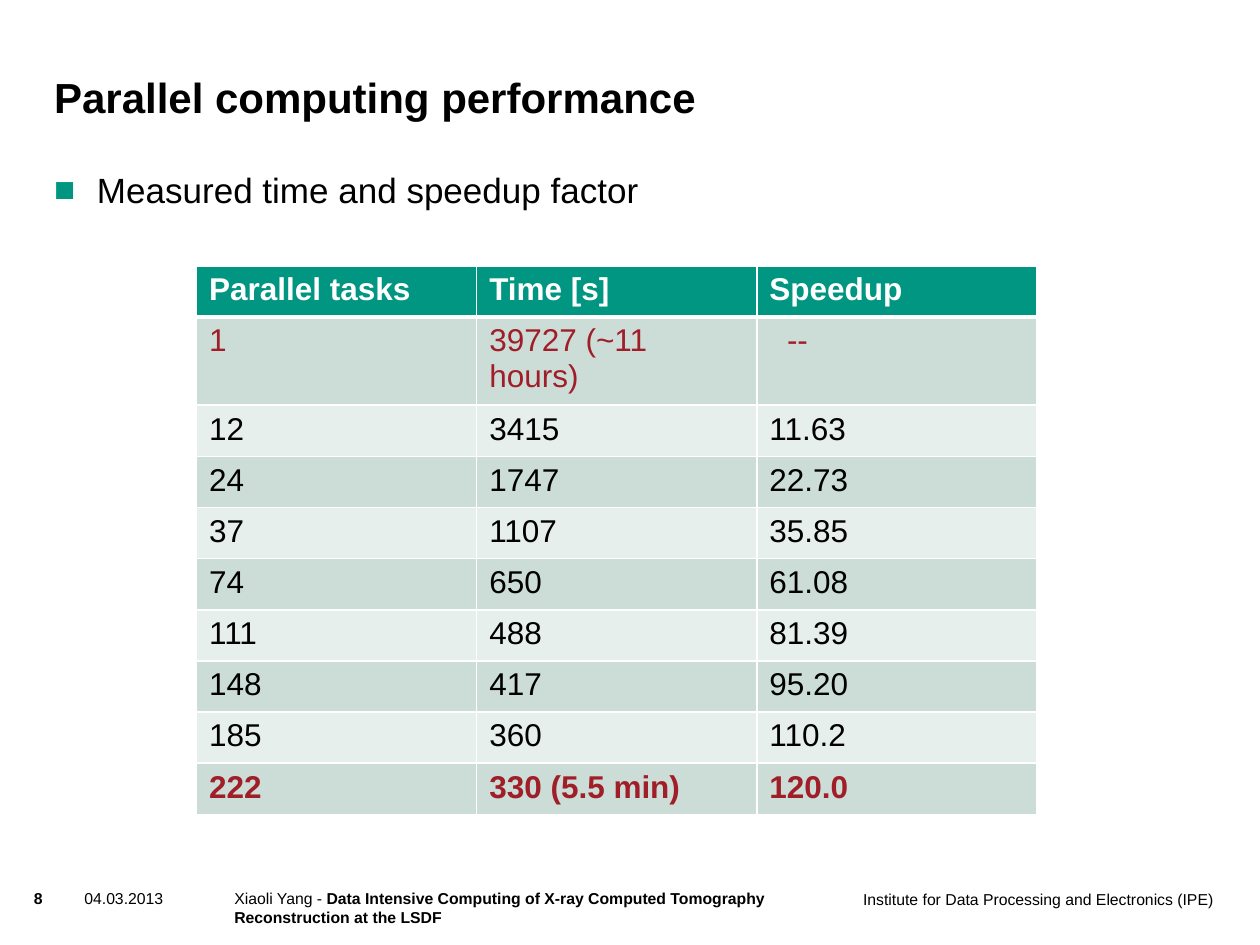
from lxml.etree import SubElement
from pptx import Presentation
from pptx.dml.color import RGBColor
from pptx.enum.text import MSO_ANCHOR
from pptx.oxml.ns import qn
from pptx.util import Inches, Pt

FONT = "Arial"
BLACK = RGBColor(0x00, 0x00, 0x00)
WHITE = RGBColor(0xFF, 0xFF, 0xFF)
GREEN = RGBColor(0x00, 0x96, 0x82)
RED = RGBColor(0xA0, 0x1E, 0x28)
DARK_BAND = RGBColor(0xCC, 0xDD, 0xD8)
LIGHT_BAND = RGBColor(0xE7, 0xEF, 0xED)

MEASUREMENTS = [
    ("Parallel tasks", "Time [s]", "Speedup"),
    ("1", "39727 (~11 hours)", "--"),
    ("12", "3415", "11.63"),
    ("24", "1747", "22.73"),
    ("37", "1107", "35.85"),
    ("74", "650", "61.08"),
    ("111", "488", "81.39"),
    ("148", "417", "95.20"),
    ("185", "360", "110.2"),
    ("222", "330 (5.5 min)", "120.0"),
]


def style_font(font, size, color=BLACK, bold=False):
    font.name = FONT
    font.size = Pt(size)
    font.bold = bold
    font.color.rgb = color


def add_text(slide, box, text, size, bold=False, anchor=MSO_ANCHOR.TOP):
    frame = slide.shapes.add_textbox(*map(Inches, box)).text_frame
    frame.word_wrap = True
    frame.vertical_anchor = anchor
    frame.margin_left = frame.margin_right = 0
    frame.margin_top = frame.margin_bottom = 0
    frame.text = text
    paragraph = frame.paragraphs[0]
    for run in paragraph.runs:
        style_font(run.font, size, bold=bold)
    return paragraph


def add_heading(slide, box):
    add_text(slide, box, "Parallel computing performance", 24, True, MSO_ANCHOR.BOTTOM)


def add_body(slide, box):
    topic = add_text(slide, box, "Measured time and speedup factor", 20)
    properties = topic._p.get_or_add_pPr()
    properties.set("marL", str(Inches(0.34)))
    properties.set("indent", str(Inches(-0.34)))
    bullet_color = SubElement(properties, qn("a:buClr"))
    SubElement(bullet_color, qn("a:srgbClr"), val=str(GREEN))
    SubElement(properties, qn("a:buFont"), typeface=FONT)
    SubElement(properties, qn("a:buChar"), char="■")


def set_borders(cell, bottom_width):
    properties = cell._tc.get_or_add_tcPr()
    widths = {"a:lnL": 1, "a:lnR": 1, "a:lnT": 1, "a:lnB": bottom_width}
    for position, (side, width) in enumerate(widths.items()):
        line = SubElement(properties, qn(side), w=str(Pt(width)))
        fill = SubElement(line, qn("a:solidFill"))
        SubElement(fill, qn("a:srgbClr"), val=str(WHITE))
        properties.insert(position, line)


def row_style(index):
    if index == 0:
        return GREEN, WHITE, True
    last = len(MEASUREMENTS) - 1
    band = DARK_BAND if index % 2 else LIGHT_BAND
    return band, RED if index in (1, last) else BLACK, index == last


def add_measurements(slide, box):
    left, top, width, height = map(Inches, box)
    row_count, column_count = len(MEASUREMENTS), len(MEASUREMENTS[0])
    table = slide.shapes.add_table(
        row_count, column_count, left, top, width, height
    ).table
    for row_index, values in enumerate(MEASUREMENTS):
        fill, color, bold = row_style(row_index)
        for column_index, value in enumerate(values):
            cell = table.cell(row_index, column_index)
            cell.text = value
            cell.fill.solid()
            cell.fill.fore_color.rgb = fill
            style_font(cell.text_frame.paragraphs[0].runs[0].font, 18, color, bold)
            above_or_below_header = {0: 3}
            set_borders(cell, above_or_below_header.get(row_index, 1))
            if row_index == 1:
                cell._tc.tcPr.find(qn("a:lnT")).set("w", str(Pt(3)))
            if value == "--":
                cell.margin_left = Inches(0.24)


def add_footer(slide, box):
    left, top, width, height = box
    add_text(slide, (left, top, 0.36, 0.24), "8", 9, True)
    add_text(slide, (left + 0.4, top, 0.94, height), "04.03.2013", 9)
    talk = add_text(slide, (left + 1.59, top, 4.65, height), "Xiaoli Yang - ", 9)
    talk_title = talk.add_run()
    talk_title.text = (
        "Data Intensive Computing of X-ray Computed Tomography "
        "Reconstruction at the LSDF"
    )
    style_font(talk_title.font, 9, bold=True)
    institute_width = 2.99
    add_text(
        slide,
        (left + width - institute_width, top + 0.01, institute_width, height),
        "Institute for Data Processing and Electronics (IPE)",
        9,
    )


def main():
    presentation = Presentation()
    presentation.slide_width = Inches(10)
    presentation.slide_height = Inches(7.5)
    slide = presentation.slides.add_slide(presentation.slide_layouts[6])
    add_footer(slide, (0.27, 7.05, 9.57, 0.39))
    add_heading(slide, (0.43, 0.36, 7.56, 0.61))
    add_body(slide, (0.43, 1.34, 9.14, 5.32))
    add_measurements(slide, (1.56, 2.11, 6.67, 4.06))
    presentation.save("out.pptx")


if __name__ == "__main__":
    main()
